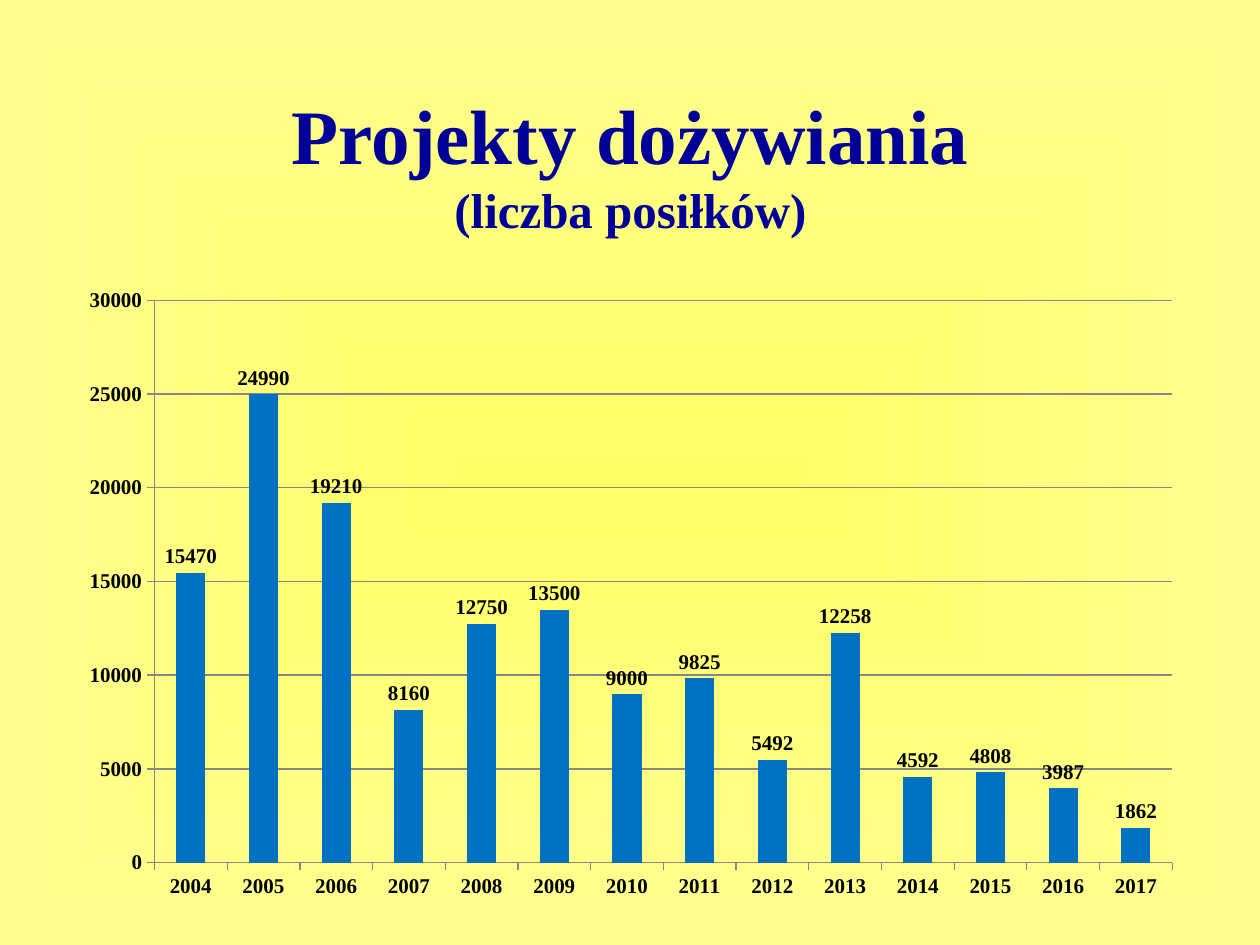
from lxml.etree import SubElement
from pptx import Presentation
from pptx.chart.data import CategoryChartData
from pptx.dml.color import RGBColor
from pptx.enum.chart import XL_CHART_TYPE as ChartType
from pptx.enum.chart import XL_LABEL_POSITION as LabelPos
from pptx.enum.chart import XL_TICK_MARK as Tick
from pptx.enum.text import MSO_ANCHOR, PP_ALIGN
from pptx.oxml.ns import qn
from pptx.util import Emu, Pt

FONT = "Times New Roman"
COLORS = {"center": "FFFF66", "edge": "FFFF92", "title": "000099",
          "text": "000000", "bar": "0070C0", "line": "878787"}
MEALS = {"2004": 15470, "2005": 24990, "2006": 19210, "2007": 8160,
         "2008": 12750, "2009": 13500, "2010": 9000, "2011": 9825,
         "2012": 5492, "2013": 12258, "2014": 4592, "2015": 4808,
         "2016": 3987, "2017": 1862}


def px(n):
    return Emu(round(n * 914400 / 126))


def rgb(name):
    return RGBColor.from_string(COLORS[name])


def style_font(font, size, color):
    font.name, font.size, font.bold = FONT, Pt(size), True
    font.color.rgb = rgb(color)


def paint_background(slide):
    fill = slide.background.fill
    fill.gradient()
    for stop, name in zip(fill.gradient_stops, ("center", "edge")):
        stop.color.rgb = rgb(name)
    # Spread the gradient from the middle instead of along a line
    lin = slide.element.find(".//" + qn("a:lin"))
    grad = lin.getparent()
    grad.remove(lin)
    shade = SubElement(grad, qn("a:path"))
    shade.set("path", "shape")
    center = SubElement(shade, qn("a:fillToRect"))
    for side in "ltrb":
        center.set(side, "50000")


def add_title(slide, x, y, w, h):
    s = slide.shapes.title
    s.left, s.top, s.width, s.height = map(px, (x, y, w, h))
    tf = s.text_frame
    tf.word_wrap = True
    tf.vertical_anchor = MSO_ANCHOR.MIDDLE
    p = tf.paragraphs[0]
    p.alignment = PP_ALIGN.CENTER
    style_font(p.font, 44, "title")
    p.add_run().text = "Projekty dożywiania"
    p.add_line_break()
    r = p.add_run()
    r.text = "(liczba posiłków)"
    r.font.size = Pt(28)


def set_plot_area(chart, x, y, w, h):
    """Fix the inner plot area, given as fractions of the chart."""
    area = chart.element.find(".//" + qn("c:plotArea"))
    layout = area.find(qn("c:layout"))
    if layout is None:
        layout = SubElement(area, qn("c:layout"))
        area.insert(0, layout)
    manual = SubElement(layout, qn("c:manualLayout"))
    for tag, val in (("layoutTarget", "inner"), ("xMode", "edge"), ("yMode", "edge"),
                     ("x", x), ("y", y), ("w", w), ("h", h)):
        SubElement(manual, qn("c:" + tag)).set("val", str(val))


def add_meal_chart(slide, x, y, w, h):
    data = CategoryChartData()
    data.categories = list(MEALS)
    data.add_series("Series 1", list(MEALS.values()))
    chart = slide.shapes.add_chart(
        ChartType.COLUMN_CLUSTERED, *map(px, (x, y, w, h)), data).chart
    chart.has_legend = chart.has_title = False
    style_font(chart.font, 12, "text")
    set_plot_area(chart, 0.08, 0.04, 0.9, 0.89)

    # Axes and gridlines
    values = chart.value_axis
    values.minimum_scale, values.maximum_scale, values.major_unit = 0, 30000, 5000
    values.has_major_gridlines = True
    for axis in (chart.category_axis, values):
        axis.major_tick_mark, axis.minor_tick_mark = Tick.OUTSIDE, Tick.NONE
        style_font(axis.tick_labels.font, 12, "text")
    for part in (chart.category_axis, values, values.major_gridlines):
        part.format.line.color.rgb = rgb("line")
        part.format.line.width = Pt(0.75)

    # Bars and their values
    plot = chart.plots[0]
    plot.gap_width = 150
    plot.vary_by_categories = False
    fill = plot.series[0].format.fill
    fill.solid()
    fill.fore_color.rgb = rgb("bar")
    labels = plot.series[0].data_labels
    labels.show_value = True
    labels.position = LabelPos.OUTSIDE_END
    style_font(labels.font, 12, "text")


def main():
    prs = Presentation()
    prs.slide_width, prs.slide_height = px(1260), px(945)
    slide = prs.slides.add_slide(prs.slide_layouts[5])
    paint_background(slide)
    add_title(slide, 95, 84, 1071, 158)
    add_meal_chart(slide, 64, 275, 1131, 632)
    prs.save("out.pptx")


if __name__ == "__main__":
    main()
